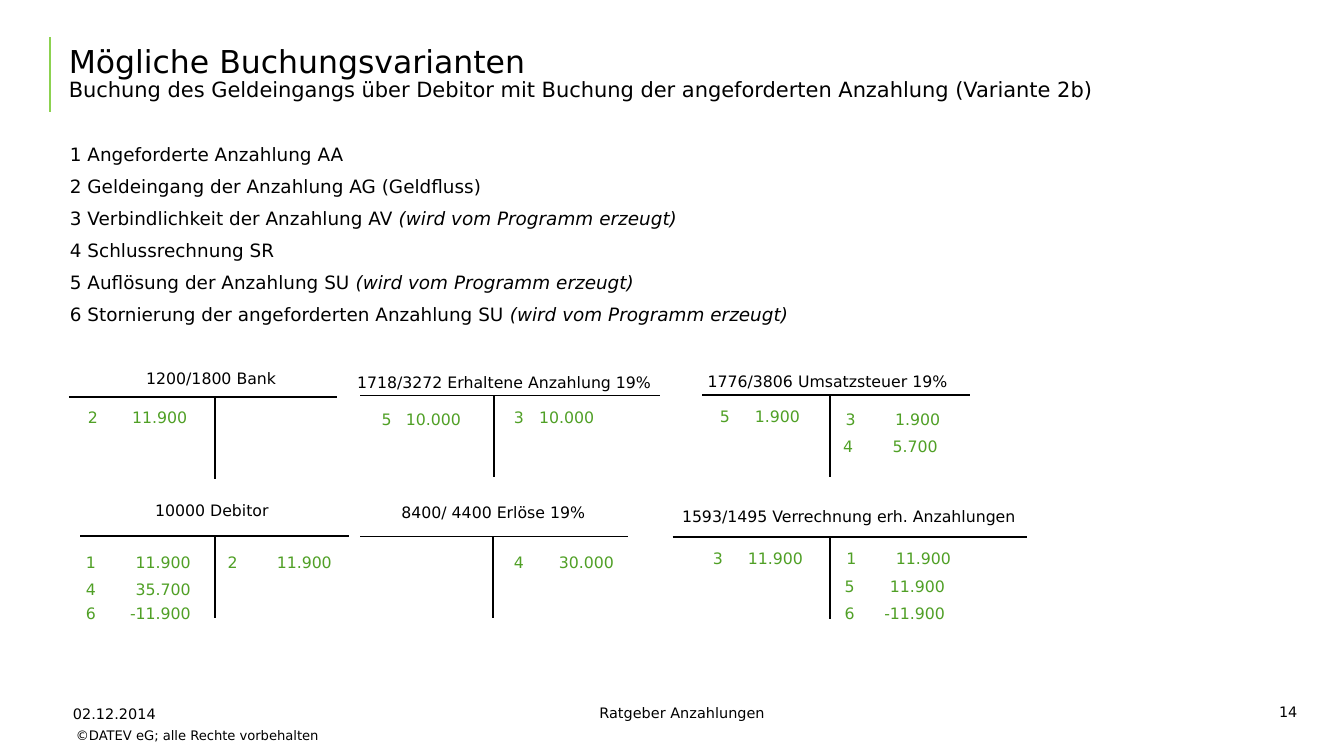
"""Build a slide of T accounts for booking down payments."""
from dataclasses import dataclass
from typing import NamedTuple

from lxml import etree
from pptx import Presentation
from pptx import slide as sl
from pptx import util as u
from pptx.dml import color
from pptx.enum import shapes, text
from pptx.oxml import ns

FONT, BLACK, GREEN, LIME = "DejaVu Sans", "000000", "50A026", "8CD250"
LEFT, MID, RIGHT = text.PP_ALIGN.LEFT, text.PP_ALIGN.CENTER, text.PP_ALIGN.RIGHT
AUTO = "(wird vom Programm erzeugt)"


class Box(NamedTuple):
    x: float
    y: float
    wide: float
    high: float = 0.75


@dataclass
class Style:
    size: float = 12
    tint: str = BLACK
    align: text.PP_ALIGN = LEFT
    line: float = 0.9
    gap: float = 0
    pad: tuple = (0.25, 0.13, 0.25, 0.13)
    anchor: text.MSO_ANCHOR = text.MSO_ANCHOR.TOP


class Account(NamedTuple):
    name: str
    box: Box
    left: float
    right: float
    top: float
    stem: float
    line: float = 0.9


class Entry(NamedTuple):
    num: int
    sum: str
    x: float
    y: float
    right: float


ACCOUNTS = [
    Account("1200/1800 Bank", Box(3.68, 9.78, 4.06), 1.85, 9.07, 10.67, 5.77, 1),
    Account("1718/3272 Erhaltene Anzahlung 19%", Box(9.35, 9.88, 9.75), 9.68, 17.73, 10.63, 13.27, 1),
    Account("1776/3806 Umsatzsteuer 19%", Box(18.77, 9.86, 7.29), 18.87, 26.06, 10.62, 22.3, 1),
    Account("10000 Debitor", Box(3.92, 13.39, 4.6), 2.16, 9.37, 14.4, 5.77),
    Account("8400/ 4400 Erlöse 19%", Box(10.54, 13.39, 6.5), 9.68, 16.89, 14.42, 13.26, 1),
    Account("1593/1495 Verrechnung erh. Anzahlungen", Box(18.08, 13.56, 9.88), 18.08, 27.61, 14.43, 22.3),
]
ENTRIES = [
    Entry(2, "11.900", 2.11, 10.9, 5.03),
    Entry(5, "10.000", 10.01, 10.95, 12.39),
    Entry(3, "10.000", 13.56, 10.9, 15.97),
    Entry(5, "1.900", 19.1, 10.85, 21.5),
    Entry(3, "1.900", 22.48, 10.95, 25.27),
    Entry(4, "5.700", 22.41, 11.66, 25.2),
    Entry(1, "11.900", 2.06, 14.78, 5.13),
    Entry(4, "35.700", 2.06, 15.52, 5.13),
    Entry(6, "-11.900", 2.06, 16.15, 5.13),
    Entry(2, "11.900", 5.87, 14.78, 8.92),
    Entry(4, "30.000", 13.56, 14.78, 16.5),
    Entry(3, "11.900", 18.91, 14.68, 21.58),
    Entry(1, "11.900", 22.5, 14.68, 25.56),
    Entry(5, "11.900", 22.45, 15.42, 25.4),
    Entry(6, "-11.900", 22.45, 16.15, 25.4),
]
STEPS = [
    ("1 Angeforderte Anzahlung AA", ""),
    ("2 Geldeingang der Anzahlung AG (Geldfluss)", ""),
    ("3 Verbindlichkeit der Anzahlung AV ", AUTO),
    ("4 Schlussrechnung SR", ""),
    ("5 Auflösung der Anzahlung SU ", AUTO),
    ("6 Stornierung der angeforderten Anzahlung SU ", AUTO),
]
FOOT = (0.33, 0.15, 0.33, 0.15)


def paint(tone: str) -> color.RGBColor:
    """Turn a hex string into a colour."""
    return color.RGBColor.from_string(tone)


def apply(item: object, vals: dict) -> None:
    """Set each named value on the item."""
    for key, val in vals.items():
        setattr(item, key, val)


def rule(page: sl.Slide, x1: float, y1: float, x2: float, y2: float, tone: str = BLACK) -> None:
    """Draw a thin straight line."""
    ends = [u.Cm(val) for val in (x1, y1, x2, y2)]
    bar = page.shapes.add_connector(shapes.MSO_CONNECTOR.STRAIGHT, *ends)
    bar.line.width = u.Pt(1.5)
    bar.line.color.rgb = paint(tone)
    etree.SubElement(bar._element.spPr, ns.qn("a:effectLst"))


def write(page: sl.Slide, box: Box, rows: list, style: Style, tab: float = 0) -> None:
    """Write rows of (text, italic, size) runs into a text box."""
    frame = page.shapes.add_textbox(*[u.Cm(val) for val in box]).text_frame
    sides = ("margin_left", "margin_top", "margin_right", "margin_bottom")
    apply(frame, dict(zip(sides, map(u.Cm, style.pad))))
    apply(frame, {"word_wrap": True, "vertical_anchor": style.anchor})
    for i, row in enumerate(rows):
        para = frame.add_paragraph() if i else frame.paragraphs[0]
        apply(para, {"alignment": style.align, "line_spacing": style.line})
        if i:
            para.space_before = u.Pt(style.gap)
        if tab:
            tabs = etree.SubElement(para._p.get_or_add_pPr(), ns.qn("a:tabLst"))
            etree.SubElement(tabs, ns.qn("a:tab"), pos=str(u.Cm(tab)), algn="r")
        for j, (words, slant, size) in enumerate(row):
            if j and size != row[j - 1][2]:
                para.add_line_break()
            run = para.add_run()
            run.text = words
            apply(run.font, {"name": FONT, "size": u.Pt(size), "italic": slant})
            run.font.color.rgb = paint(style.tint)


def label(page: sl.Slide, box: Box, words: str, style: Style) -> None:
    """Write one plain line."""
    write(page, box, [[(words, False, style.size)]], style)


def account(page: sl.Slide, acc: Account) -> None:
    """Draw a T account with its name."""
    rule(page, acc.left, acc.top, acc.right, acc.top)
    rule(page, acc.stem, acc.top, acc.stem, acc.top + 2.2)
    label(page, acc.box, acc.name, Style(line=acc.line))


def entry(page: sl.Slide, item: Entry) -> None:
    """Write a booking number and its right-aligned amount."""
    span = item.right - item.x
    row = [(f"{item.num}\t{item.sum}", False, 12)]
    write(page, Box(item.x, item.y, span + 0.4), [row], Style(tint=GREEN), span - 0.25)


def main() -> None:
    """Build and save the slide."""
    deck = Presentation()
    apply(deck, {"slide_width": u.Cm(36.12), "slide_height": u.Cm(20.32)})
    page = deck.slides.add_slide(deck.slide_layouts[6])
    rule(page, 1.35, 1, 1.35, 3, LIME)
    head = [
        ("Mögliche Buchungsvarianten", False, 24),
        ("Buchung des Geldeingangs über Debitor mit Buchung der angeforderten Anzahlung (Variante 2b)", False, 16),
    ]
    write(page, Box(1.85, 0.71, 31.01, 2.57), [head],
          Style(pad=(0, 0, 0.33, 0), anchor=text.MSO_ANCHOR.MIDDLE))
    steps = [[(words, slant, 14) for words, slant in ((main, False), (note, True)) if words]
             for main, note in STEPS]
    write(page, Box(1.63, 3.73, 32.92, 6.05), steps, Style(14, line=1, gap=7.5))
    for acc in ACCOUNTS:
        account(page, acc)
    for item in ENTRIES:
        entry(page, item)
    label(page, Box(1.63, 18.8, 8.43), "02.12.2014", Style(11, line=1, pad=FOOT))
    label(page, Box(12.62, 18.77, 11.43), "Ratgeber Anzahlungen", Style(11, align=MID, line=1, pad=FOOT))
    label(page, Box(33.17, 18.75, 2.03), "14", Style(11, align=RIGHT, line=1, pad=FOOT))
    label(page, Box(1.63, 19.46, 7.34), "©DATEV eG; alle Rechte vorbehalten", Style(10, align=MID))
    deck.save("out.pptx")


if __name__ == "__main__":
    main()
